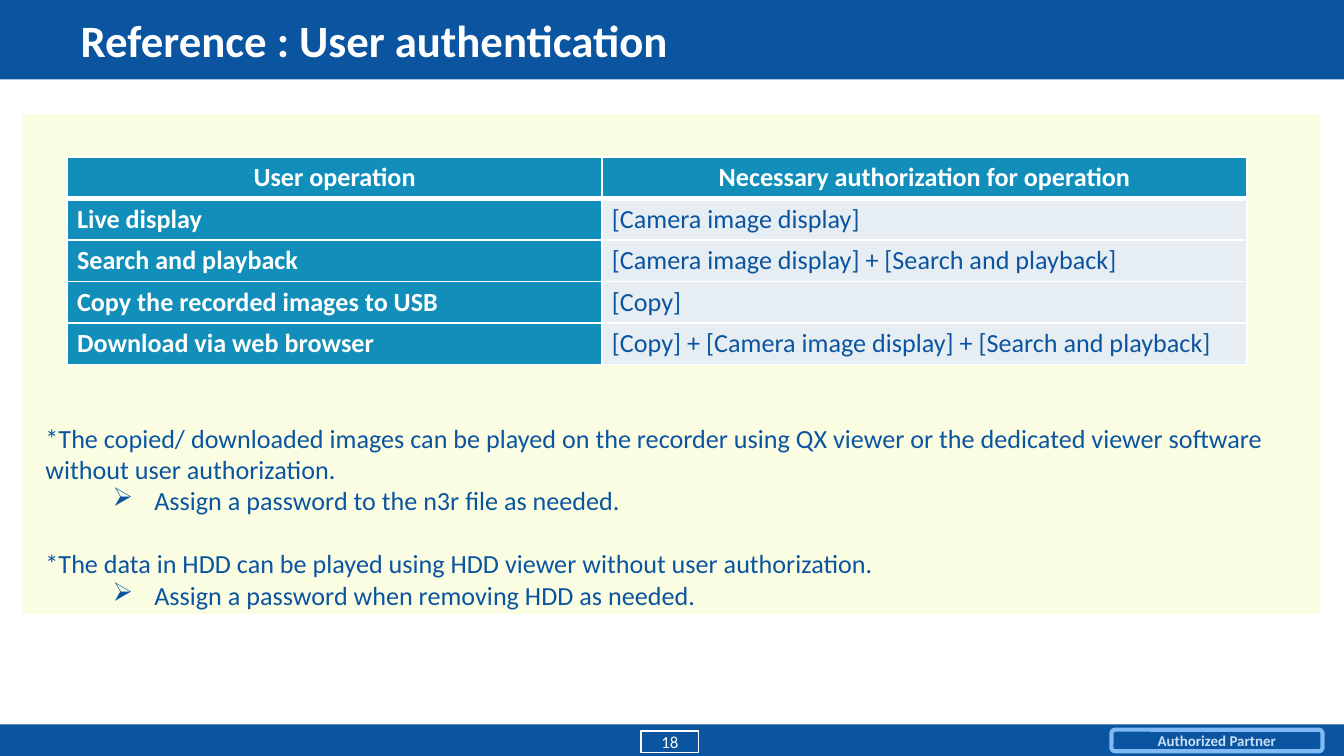
import pptx
import pptx.util
import pptx.dml.color
import pptx.enum.shapes
import pptx.enum.text
import pptx.oxml
import pptx.oxml.ns
from lxml import etree

Inches = pptx.util.Inches
Pt = pptx.util.Pt
Shape = pptx.enum.shapes.MSO_SHAPE
Align = pptx.enum.text.PP_ALIGN
Middle = pptx.enum.text.MSO_ANCHOR.MIDDLE
BLUE, TEAL, WHITE = "0A54A0", "118FBA", "FFFFFF"


def color(text):
    return pptx.dml.color.RGBColor.from_string(text)


def node(parent, tag, **attrs):
    return etree.SubElement(parent, pptx.oxml.ns.qn(tag), **attrs)


class Deck:
    font = "Calibri"

    def __init__(self, wide, high):
        self.file = pptx.Presentation()
        self.file.slide_width = Inches(wide)
        self.file.slide_height = Inches(high)
        self.slide = self.file.slides.add_slide(self.file.slide_layouts[5])

    def place(self, item, box):
        item.left, item.top, item.width, item.height = map(Inches, box)

    def run(self, para, text, size, tint, bold=False):
        run = para.add_run()
        run.text = text
        run.font.name = self.font
        run.font.size = Pt(size)
        run.font.bold = bold
        run.font.color.rgb = color(tint)

    def title(self, box, text):
        item = self.slide.shapes.title
        self.place(item, box)
        frame = item.text_frame
        frame.vertical_anchor = Middle
        frame.word_wrap = True
        para = frame.paragraphs[0]
        para.alignment = Align.LEFT
        self.run(para, text, 24, WHITE, True)
        item.element.getparent().append(item.element)

    def shape(self, box, fill=None, line=None, width=0, kind=Shape.RECTANGLE, alpha=None):
        item = self.slide.shapes.add_shape(kind, *map(Inches, box))
        item.shadow.inherit = False
        if fill:
            item.fill.solid()
            item.fill.fore_color.rgb = color(fill)
        else:
            item.fill.background()
        if line:
            item.line.color.rgb = color(line)
            item.line.width = Pt(width)
        else:
            item.line.fill.background()
        if alpha:
            tint = item.element.spPr.find(".//" + pptx.oxml.ns.qn("a:srgbClr"))
            node(tint, "a:alpha", val=str(alpha * 1000))
        return item

    def label(self, item, text, size, tint, bold=False):
        frame = item.text_frame
        frame.margin_top = frame.margin_bottom = 0
        frame.vertical_anchor = Middle
        frame.word_wrap = False
        para = frame.paragraphs[0]
        para.alignment = Align.CENTER
        self.run(para, text, size, tint, bold)

    def border(self, cell, tag, width):
        line = node(cell._tc.get_or_add_tcPr(), tag, w=str(Pt(width)))
        node(node(line, "a:solidFill"), "a:srgbClr", val=WHITE)

    def cell(self, cell, text, row, col):
        head = row == 0
        strong = head or col == 0
        for tag in ("a:lnL", "a:lnR", "a:lnT", "a:lnB"):
            thick = (head and tag == "a:lnB") or (row == 1 and tag == "a:lnT")
            self.border(cell, tag, 3 if thick else 1)
        cell.fill.solid()
        cell.fill.fore_color.rgb = color(TEAL if strong else "E7EEF3")
        cell.margin_left = cell.margin_right = Pt(5.3)
        cell.margin_top = cell.margin_bottom = Pt(2.6)
        cell.vertical_anchor = Middle
        para = cell.text_frame.paragraphs[0]
        para.alignment = Align.CENTER if head else Align.LEFT
        self.run(para, text, 14, WHITE if strong else BLUE, strong)

    def table(self, box, cols, rows):
        frame = self.slide.shapes.add_table(len(rows), len(cols), *map(Inches, box))
        grid = frame.table
        for col, width in zip(grid.columns, cols):
            col.width = Inches(width)
        for r, texts in enumerate(rows):
            grid.rows[r].height = Inches(0.28)
            for c, text in enumerate(texts):
                self.cell(grid.cell(r, c), text, r, c)
        frame.height = Inches(box[3])

    def notes(self, box, pairs):
        frame = self.slide.shapes.add_textbox(*map(Inches, box)).text_frame
        frame.word_wrap = True
        for i, (note, tip) in enumerate(pairs):
            para = frame.add_paragraph() if i else frame.paragraphs[0]
            if i:
                para.space_before = Pt(17)
            self.run(para, note, 14, BLUE)
            para = frame.add_paragraph()
            para.level = 1
            self.run(para, tip, 14, BLUE)
            props = para._p.get_or_add_pPr()
            props.set("marL", str(Inches(0.81)))
            props.set("indent", str(Inches(-0.31)))
            node(props, "a:buChar", char="➢")


def main():
    deck = Deck(10, 10 * 9 / 16)
    deck.shape((0, 5.39, 10, 0.24), BLUE)
    deck.shape((0, 0, 10, 0.59), BLUE)
    badge = deck.shape((8.27, 5.43, 1.57, 0.16), line="7FBAF7", width=2.25,
                       kind=Shape.ROUNDED_RECTANGLE)
    deck.label(badge, "Authorized Partner", 8, "C9E1F8", True)
    page = deck.shape((4.77, 5.44, 0.43, 0.16), line=WHITE, width=0.75)
    deck.label(page, "18", 9, WHITE)
    deck.shape((0.17, 0.85, 9.65, 3.72), "F6FDC7", alpha=50)
    deck.title((0.5, 0.01, 8.07, 0.57), "Reference : User authentication")
    deck.table((0.5, 1.17, 8.77, 1.54), (3.98, 4.8), (
        ("User operation", "Necessary authorization for operation"),
        ("Live display", "[Camera image display]"),
        ("Search and playback", "[Camera image display] + [Search and playback]"),
        ("Copy the recorded images to USB", "[Copy]"),
        ("Download via web browser",
         "[Copy] + [Camera image display] + [Search and playback]"),
    ))
    deck.notes((0.24, 3.09, 9.5, 1.51), (
        ("*The copied/ downloaded images can be played on the recorder using QX viewer "
         "or the dedicated viewer software without user authorization.",
         "Assign a password to the n3r file as needed."),
        ("*The data in HDD can be played using HDD viewer without user authorization.",
         "Assign a password when removing HDD as needed."),
    ))
    deck.file.save("out.pptx")


if __name__ == "__main__":
    main()
